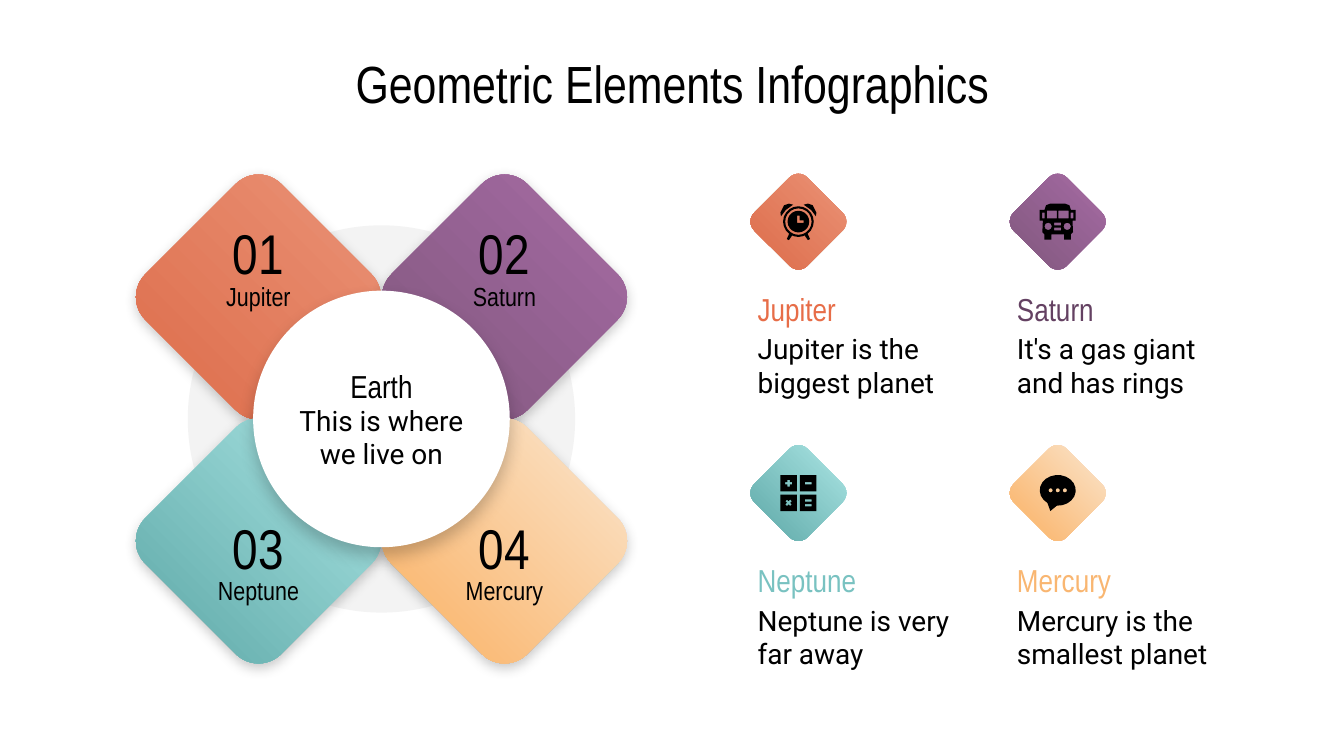
from math import cos, radians, sin

from lxml import etree
from pptx import Presentation
from pptx.dml.color import RGBColor
from pptx.enum import shapes, text
from pptx.oxml import ns
from pptx.util import Cm, Pt

COLORS = {"ink": "000000", "paper": "FFFFFF", "ring": "F3F3F3"}
GRADIENTS = {
    "Jupiter": ("EB9479", "DC6A47"),
    "Saturn": ("A86CA5", "7E567C"),
    "Neptune": ("B1E9E8", "57A4A3"),
    "Mercury": ("FAE8D5", "FAAE5B"),
}
HEADINGS = {"Jupiter": "E76D48", "Saturn": "644162",
            "Neptune": "79C2C1", "Mercury": "F9B671"}
FACTS = {
    "Jupiter": "Jupiter is the biggest planet",
    "Saturn": "It's a gas giant and has rings",
    "Neptune": "Neptune is very far away",
    "Mercury": "Mercury is the smallest planet",
}
NARROW, ROBOTO = "Arial Narrow", "Roboto"


def rgb(name):
    return RGBColor.from_string(COLORS.get(name, name))


def write(frame, words, size, font, color="ink", align=text.PP_ALIGN.LEFT):
    frame.word_wrap = True
    frame.auto_size = text.MSO_AUTO_SIZE.NONE
    frame.margin_left = frame.margin_right = Cm(0.25)
    frame.margin_top = frame.margin_bottom = Cm(0.25)
    para = frame.paragraphs[0]
    para.alignment = align
    span = para.add_run()
    span.text = words
    span.font.size, span.font.name = Pt(size), font
    span.font.color.rgb = rgb(color)


def add_label(page, x, y, w, h, *style, **options):
    box = page.shapes.add_textbox(Cm(x), Cm(y), Cm(w), Cm(h))
    box.text_frame.vertical_anchor = text.MSO_ANCHOR.MIDDLE
    write(box.text_frame, *style, **options)


def add_centred(page, kind, cx, cy, size):
    shape = page.shapes.add_shape(
        kind, Cm(cx - size / 2), Cm(cy - size / 2), Cm(size), Cm(size))
    shape.shadow.inherit = False
    shape.line.fill.background()
    return shape


def add_circle(page, cx, cy, size, color):
    circle = add_centred(page, shapes.MSO_SHAPE.OVAL, cx, cy, size)
    circle.fill.solid()
    circle.fill.fore_color.rgb = rgb(color)
    return circle


def add_diamond(page, cx, cy, size, planet):
    diamond = add_centred(page, shapes.MSO_SHAPE.ROUNDED_RECTANGLE, cx, cy, size)
    diamond.rotation = 45
    diamond.adjustments[0] = 0.167
    diamond.fill.gradient()
    diamond.fill.gradient_angle = 270
    for stop, position, color in zip(diamond.fill.gradient_stops, (0, 1), GRADIENTS[planet]):
        stop.position = position
        stop.color.rgb = rgb(color)
    return diamond


def drop_shadow(shape, opacity, blur, distance):
    effects = shape._element.spPr.find(ns.qn("a:effectLst"))
    shadow = etree.SubElement(
        effects, ns.qn("a:outerShdw"), blurRad=str(Pt(blur)), dist=str(Pt(distance)),
        dir="5400000", algn="bl", rotWithShape="0")
    color = etree.SubElement(shadow, ns.qn("a:srgbClr"), val=COLORS["ink"])
    etree.SubElement(color, ns.qn("a:alpha"), val=str(opacity * 1000))


# Icon outlines are lists of points in millimetres around the icon's centre.
def oval(cx, cy, rx, ry, steps=8, start=0, sweep=360):
    angles = [radians(start + sweep * step / steps) for step in range(steps)]
    return [(cx + rx * cos(a), cy + ry * sin(a)) for a in angles]


def slab(x, y, w, h):
    return [(x, y), (x + w, y), (x + w, y + h), (x, y + h)]


def mirror(points):
    return [(-x, y) for x, y in points]


def both_sides(*outlines):
    return [side for points in outlines for side in (points, mirror(points))]


def cross(cx, cy, turn=0):
    arm, half = 0.65, 0.22
    quarter = [(half, -half), (arm, -half), (arm, half)]
    points = []
    for angle in range(turn, turn + 360, 90):
        c, s = cos(radians(angle)), sin(radians(angle))
        points += [(cx + x * c - y * s, cy + x * s + y * c) for x, y in quarter]
    return points


def clock_icon():
    hands = [(-0.25, -1.15), (0.25, -1.15), (0.25, -0.25), (1, -0.25), (1, 0.25), (-0.25, 0.25)]
    bell = [(1, -3.2), (1.8, -3.4), (2.7, -3.1), (3.4, -1.7), (3.3, -1), (2.4, -2.2)]
    leg = [(1.2, 2.64), (1.75, 2.31), (2.2, 3.3), (1.8, 3.5)]
    rings = [oval(0, 0, r, r, 20) for r in (2.9, 2.5, 2.05)]
    return rings + [hands] + both_sides(bell, leg)


def bus_icon():
    half = [(1.4, -3.4), (2.2, -3.1), (2.5, -2.2), (3.4, -2.2), (3.4, -0.2), (2.8, -0.2),
            (2.9, 2), (2.5, 2.4), (2.5, 3.4), (1.2, 3.4), (1.2, 2.4)]
    window, side_mirror = slab(0.15, -2.1, 1.9, 1.5), slab(2.45, -1.7, 0.5, 1.1)
    grille = [slab(-0.65, y, 1.3, 0.5) for y in (0.2, 1.15)]
    return ([half + mirror(half)[::-1]] + grille
            + both_sides(window, side_mirror, oval(1.8, 0.9, 0.7, 0.7)))


def calculator_icon():
    near, far, middle = 0.3, 3.4, 1.85
    keys = [slab(x, y, 3.1, 3.1) for x in (-far, near) for y in (-far, near)]
    bars = [slab(middle - 0.65, y - 0.22, 1.3, 0.44) for y in (-middle, 1.4, 2.3)]
    return keys + bars + [cross(-middle, -middle), cross(-middle, middle, 45)]


def speech_icon():
    bubble = oval(0, -0.5, 3.4, 2.9, 20, 125, 345) + [(-1.4, 3.4)]
    return [bubble] + [oval(x, -0.5, 0.4, 0.4) for x in (-1.35, 0, 1.35)]


ICONS = {"Jupiter": clock_icon, "Saturn": bus_icon,
         "Neptune": calculator_icon, "Mercury": speech_icon}


def add_icon(page, cx, cy, outlines):
    builder = None
    for points in outlines:
        first, *rest = [(Cm(cx + x / 10), Cm(cy + y / 10)) for x, y in points]
        if builder is None:
            builder = page.shapes.build_freeform(*first)
        else:
            builder.move_to(*first)
        builder.add_line_segments(rest, close=True)
    icon = builder.convert_to_shape()
    icon.shadow.inherit = False
    icon.fill.solid()
    icon.fill.fore_color.rgb = rgb("ink")
    icon.line.fill.background()


def add_wheel(page, x, y, w, h):
    """Four numbered diamonds around a central disc."""
    cx, cy, size = x + w / 2, y + h / 2, 3.63
    centred = text.PP_ALIGN.CENTER
    add_circle(page, cx, cy, 7.32, "ring")
    spots = []
    for index, planet in enumerate(GRADIENTS):
        row, column = divmod(index, 2)
        px = x + size / 2 + column * (w - size)
        py = y + size / 2 + row * (h - size)
        drop_shadow(add_diamond(page, px, py, size, planet), 22, 6.8, 2.2)
        spots.append((planet, px, py + (0.11 if row else -0.85)))
    drop_shadow(add_circle(page, cx, cy, 4.85, "paper"), 21, 9, 4.5)
    add_label(page, cx - 1.98, cy - 0.22, 3.96, 1.12, "This is where we live on",
              15, ROBOTO, align=centred)
    add_label(page, cx - 1.98, cy - 0.95, 3.96, 0.64, "Earth", 17, NARROW, align=centred)
    for number, (planet, px, py) in enumerate(spots, 1):
        add_label(page, px - 2.15, py + 0.48, 4.3, 0.69, planet, 14, NARROW, align=centred)
        add_label(page, px - 0.91, py - 0.51, 1.82, 1.02, f"{number:02}", 30, NARROW,
                  align=centred)


def add_card(page, x, y, w, planet):
    cx, cy = x + 1.02, y + 0.71
    add_diamond(page, cx, cy, 1.42, planet)
    add_icon(page, cx, cy, ICONS[planet]())
    add_label(page, x, y + 2.01, w, 0.69, planet, 17, NARROW, HEADINGS[planet])
    add_label(page, x, y + 2.82, w, 1.22, FACTS[planet], 15, ROBOTO)


def add_title(page, x, y, w, h):
    title = page.shapes.title
    title.left, title.top, title.width, title.height = Cm(x), Cm(y), Cm(w), Cm(h)
    title.text_frame.vertical_anchor = text.MSO_ANCHOR.TOP
    write(title.text_frame, "Geometric Elements Infographics", 28, NARROW,
          align=text.PP_ALIGN.CENTER)


def main():
    deck = Presentation()
    deck.slide_width, deck.slide_height = Cm(25.4), Cm(14.29)
    page = deck.slides.add_slide(deck.slide_layouts[5])
    add_title(page, 1, 0.71, 23.4, 1.6)
    add_wheel(page, 3.07, 3.8, 8.28, 8.24)
    for index, planet in enumerate(FACTS):
        row, column = divmod(index, 2)
        add_card(page, 14.07 + column * 4.9, 3.48 + row * 5.13, 4.29, planet)
    deck.save("out.pptx")


if __name__ == "__main__":
    main()
